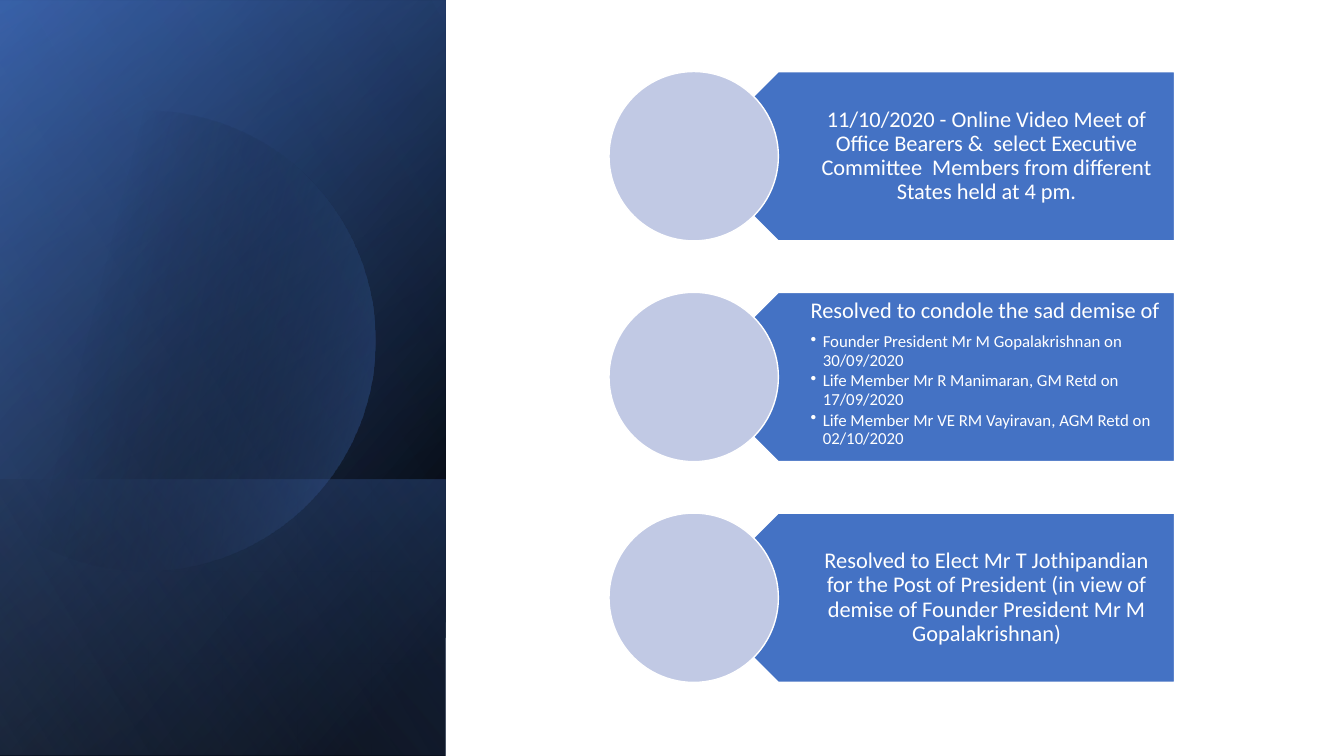
import math

import lxml.etree
import pptx
import pptx.dml.color
import pptx.enum.shapes
import pptx.enum.text
import pptx.oxml
import pptx.oxml.ns
import pptx.util

Inches, Pt = pptx.util.Inches, pptx.util.Pt
SHAPE = pptx.enum.shapes.MSO_SHAPE
ANCHOR = pptx.enum.text.MSO_ANCHOR
ALIGN = pptx.enum.text.PP_ALIGN
qn = pptx.oxml.ns.qn


def paint(shape, fill, line=None):
    """Fill with one hex colour and outline with another, or with no line."""
    shape.shadow.inherit = False
    shape.fill.solid()
    shape.fill.fore_color.rgb = pptx.dml.color.RGBColor.from_string(fill)
    if line:
        shape.line.color.rgb = pptx.dml.color.RGBColor.from_string(line)
        shape.line.width = Pt(1)
    else:
        shape.line.fill.background()


def shade(shape, stops, angle):
    """Apply a gradient; stops are (position %, hex colour, opacity %)."""
    paint(shape, "000000")
    stop_xml = "".join(
        f'<a:gs pos="{place * 1000}"><a:srgbClr val="{colour}">'
        f'<a:alpha val="{opacity * 1000}"/></a:srgbClr></a:gs>'
        for place, colour, opacity in stops)
    gradient = pptx.oxml.parse_xml(
        f'<a:gradFill {pptx.oxml.ns.nsdecls("a")} rotWithShape="1">'
        f'<a:gsLst>{stop_xml}</a:gsLst>'
        f'<a:lin ang="{angle * 60000}" scaled="0"/></a:gradFill>')
    properties = shape.element.spPr
    properties.replace(properties.find(qn("a:solidFill")), gradient)


deck = pptx.Presentation()
deck.slide_width, deck.slide_height = Inches(13.33), Inches(7.5)
slide = deck.slides.add_slide(deck.slide_layouts[6])
shapes = slide.shapes

backdrop = shapes.add_shape(SHAPE.RECTANGLE, 0, 0, deck.slide_width, deck.slide_height)
paint(backdrop, "FFFFFF")

# Left panel: turned gradient layers with a glowing disc under the last one
panel_layers = [
    (-1.54, 1.54, 7.5, [(8, "000000", 100), (100, "2F5597", 100)], 50),
    (-1.54, 1.55, 7.5, [(0, "000000", 0), (99, "4472C4", 46)], 30),
    (0.84, 3.92, 2.74, [(2, "4472C4", 29), (100, "000000", 30)], 130),
    (-1.54, 1.53, 7.5, [(0, "000000", 0), (99, "8FAADC", 11)], 120),
]
disc_x, disc_y, disc_radius = 1.44, 3.38, 2.28
disc_reach = math.acos(-disc_x / disc_radius)  # the arc stops at the slide's edge
disc_steps = 120
disc_points = []
for step in range(disc_steps + 1):
    turn = disc_reach * (2 * step / disc_steps - 1)
    disc_points.append((Inches(disc_x + disc_radius * math.cos(turn)),
                        Inches(disc_y + disc_radius * math.sin(turn))))

for left, top, length, stops, angle in panel_layers:
    if layer_is_last := (angle == panel_layers[-1][-1]):
        outline = shapes.build_freeform(*disc_points[0])
        outline.add_line_segments(disc_points[1:], close=True)
        shade(outline.convert_to_shape(), [(29, "000000", 0), (100, "4472C4", 43)], 14)
    layer = shapes.add_shape(SHAPE.RECTANGLE, Inches(left), Inches(top),
                             Inches(length), Inches(4.42))
    layer.rotation = 90
    layer.element.spPr.find(qn("a:xfrm")).set("flipH", "1")
    shade(layer, stops, angle)

# Right side: one row per resolution, as (heading, bullets)
resolutions = [
    ("11/10/2020 - Online Video Meet of Office Bearers &\u00a0 select Executive "
     "Committee\u00a0 Members from different States held at 4 pm.", []),
    ("Resolved to condole the sad demise of",
     ["Founder President Mr M Gopalakrishnan on 30/09/2020",
      "Life Member Mr R Manimaran, GM Retd on 17/09/2020",
      "Life Member Mr VE RM Vayiravan, AGM Retd on 02/10/2020"]),
    ("Resolved to Elect Mr T Jothipandian for the Post of President (in view of "
     "demise of Founder President Mr M Gopalakrishnan)", []),
]
first_row, row_pitch, row_height = 0.71, 2.19, Inches(1.68)
frame_format = {"word_wrap": True, "margin_left": Inches(0.74), "margin_right": Inches(0.12),
                "margin_top": Inches(0.07), "margin_bottom": Inches(0.07)}

for row, (heading, bullets) in enumerate(resolutions):
    top = Inches(first_row + row * row_pitch)
    banner = shapes.add_shape(SHAPE.PENTAGON, Inches(6.88), top, Inches(4.77), row_height)
    banner.rotation = 180
    paint(banner, "4472C4", "FFFFFF")

    frame = shapes.add_textbox(Inches(7.3), top, Inches(4.35), row_height).text_frame
    for key, value in frame_format.items():
        setattr(frame, key, value)
    frame.vertical_anchor = ANCHOR.TOP if bullets else ANCHOR.MIDDLE

    for index, wording in enumerate([heading, *bullets]):
        paragraph = frame.add_paragraph() if index else frame.paragraphs[0]
        paragraph.alignment = ALIGN.LEFT if bullets else ALIGN.CENTER
        paragraph.line_spacing = 0.9
        paragraph.space_after = Pt(2 if index else 7)
        run = paragraph.add_run()
        run.text = wording
        run.font.name = "Calibri"
        run.font.size = Pt(12 if index else 16)
        run.font.color.rgb = pptx.dml.color.RGBColor.from_string("FFFFFF")
        if index:
            paragraph.level = 1
            bullet_format = paragraph._p.get_or_add_pPr()
            bullet_format.set("marL", str(Inches(0.12)))
            bullet_format.set("indent", str(-Inches(0.12)))
            lxml.etree.SubElement(bullet_format, qn("a:buChar")).set("char", "•")

    medallion = shapes.add_shape(SHAPE.OVAL, Inches(6.04), top, row_height, row_height)
    paint(medallion, "C1C9E4", "FFFFFF")

deck.save("out.pptx")
